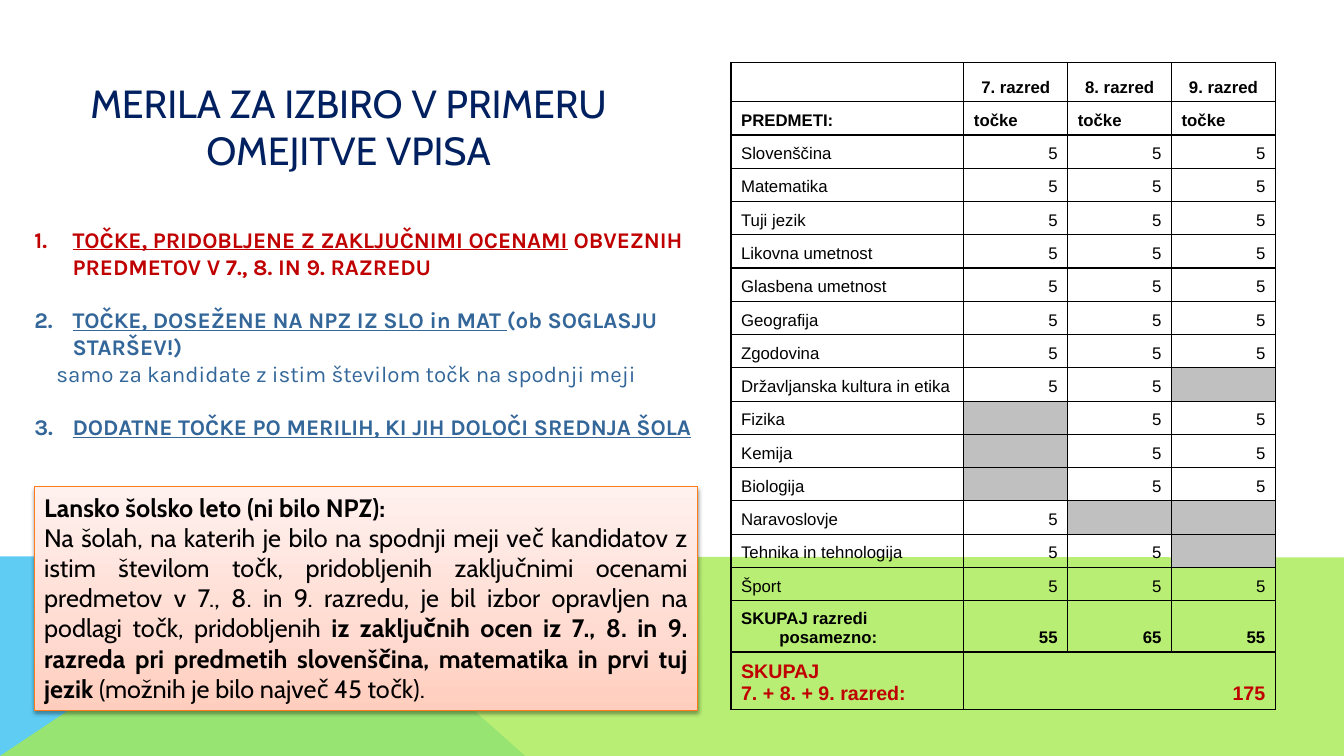
from dataclasses import dataclass
from typing import Optional

from lxml import etree
from pptx import Presentation
from pptx import util as u
from pptx.dml.color import RGBColor
from pptx.enum import shapes, text
from pptx.oxml.ns import qn

PX = 9144  # EMU per px, 100 px to the inch
HANGING = 38
BLACK, RED, NAVY, BLUE, GREY = "000000", "C00000", "002060", "336699", "C0C0C0"
LEFT, CENTER, RIGHT, JUSTIFY = (text.PP_ALIGN.LEFT, text.PP_ALIGN.CENTER,
                                text.PP_ALIGN.RIGHT, text.PP_ALIGN.JUSTIFY)


@dataclass(frozen=True)
class Style:
    font: str
    size: int
    color: str
    bold: bool = False
    underline: bool = False


@dataclass
class Criterion:
    runs: list[tuple[str, Style]]
    number: Optional[int] = None
    gap: int = 0


@dataclass
class TableRow:
    label: str
    values: list[str]
    height: int = 33
    align: text.PP_ALIGN = RIGHT
    style: Style = Style("Arial", 12, BLACK)


@dataclass
class Band:
    points: list[tuple[int, int]]
    color: str
    opacity: int = 100


def px(length: int) -> u.Emu:
    return u.Emu(length * PX)


def rgb(color: str) -> RGBColor:
    return RGBColor.from_string(color)


def add(parent, tag: str, **attributes):
    return etree.SubElement(parent, qn(tag), {k: str(v) for k, v in attributes.items()})


def format_run(run, style: Style) -> None:
    font = run.font
    font.name, font.size, font.color.rgb = style.font, u.Pt(style.size), rgb(style.color)
    font.bold, font.underline = style.bold, style.underline


def add_runs(paragraph, runs: list[tuple[str, Style]]) -> None:
    for words, style in runs:
        run = paragraph.add_run()
        run.text = words
        format_run(run, style)


def indent(paragraph, left: int, first: int) -> None:
    properties = paragraph._p.get_or_add_pPr()
    properties.set("marL", str(left * PX))
    properties.set("indent", str(first * PX))


def place(shape, left: int, top: int, width: int, height: int) -> None:
    shape.left, shape.top, shape.width, shape.height = map(px, (left, top, width, height))
    shape.text_frame.auto_size = text.MSO_AUTO_SIZE.NONE
    shape.text_frame.word_wrap = True


def add_title(slide, lines: str) -> None:
    title = slide.shapes.title
    place(title, 13, 47, 674, 157)
    title.text_frame.vertical_anchor = text.MSO_ANCHOR.MIDDLE
    title.text_frame.text = lines
    for paragraph in title.text_frame.paragraphs:
        paragraph.alignment = CENTER
        format_run(paragraph.runs[0], Style("Cabin", 28, NAVY))


def add_criteria(slide, criteria: list[Criterion]) -> None:
    body = slide.placeholders[1]
    place(body, 24, 219, 674, 226)
    frame = body.text_frame
    for index, criterion in enumerate(criteria):
        paragraph = frame.add_paragraph() if index else frame.paragraphs[0]
        paragraph.space_before = u.Pt(criterion.gap)
        properties = paragraph._p.get_or_add_pPr()
        if criterion.number:
            indent(paragraph, HANGING, -HANGING)
            add(properties, "a:buFontTx")
            add(properties, "a:buAutoNum", type="arabicPeriod", startAt=criterion.number)
        else:
            indent(paragraph, 22, 0)
            add(properties, "a:buNone")
        add_runs(paragraph, criterion.runs)


def add_band(slide, band: Band) -> None:
    builder = slide.shapes.build_freeform(*band.points[0], scale=PX)
    builder.add_line_segments(band.points[1:], close=True)
    shape = builder.convert_to_shape()
    shape.shadow.inherit = False
    shape.line.fill.background()
    shape.fill.solid()
    shape.fill.fore_color.rgb = rgb(band.color)
    color = shape._element.spPr.find(".//" + qn("a:srgbClr"))
    add(color, "a:alpha", val=band.opacity * 1000)


def fill_cell(cell, words: str, align: text.PP_ALIGN, style: Style, fill: str = "") -> None:
    properties = cell._tc.get_or_add_tcPr()
    for side in ("a:lnL", "a:lnR", "a:lnT", "a:lnB"):
        line = add(properties, side, w=u.Pt(1))
        add(add(line, "a:solidFill"), "a:srgbClr", val=BLACK)
    if fill:
        cell.fill.solid()
        cell.fill.fore_color.rgb = rgb(fill)
    else:
        cell.fill.background()
    cell.vertical_anchor = text.MSO_ANCHOR.BOTTOM
    cell.text_frame.text = words
    for paragraph in cell.text_frame.paragraphs:
        paragraph.alignment = align
        indent(paragraph, HANGING, -HANGING)
        for run in paragraph.runs:
            format_run(run, style)
        if not words:
            paragraph._p.get_or_add_endParaRPr().set("sz", str(style.size * 100))


def add_points_table(slide, rows: list[TableRow]) -> None:
    widths = [231] + [103] * 3
    height = sum(row.height for row in rows)
    table = slide.shapes.add_table(len(rows), len(widths), px(725), px(62),
                                   px(sum(widths)), px(height)).table
    table.first_row = table.horz_banding = False
    for column, width in zip(table.columns, widths):
        column.width = px(width)
    for index, row in enumerate(rows):
        table.rows[index].height = px(row.height)
        fill_cell(table.cell(index, 0), row.label, LEFT, row.style)
        for column, value in enumerate(row.values, 1):
            fill_cell(table.cell(index, column), value, row.align, row.style,
                      "" if value else GREY)
    last = len(rows) - 1
    for column in (2, 3):
        fill_cell(table.cell(last, column), "", RIGHT, rows[last].style)
    table.cell(last, 1).merge(table.cell(last, 3))


def add_note(slide, paragraphs: list[list[tuple[str, Style]]]) -> None:
    note = slide.shapes.add_shape(shapes.MSO_SHAPE.RECTANGLE, 0, 0, 0, 0)
    place(note, 34, 483, 658, 222)
    note.line.color.rgb, note.line.width = rgb("FF7C1B"), u.Pt(0.75)
    note.fill.gradient()
    note.fill.gradient_angle = 90
    stops = note._element.spPr.find(".//" + qn("a:gsLst"))
    for stop in list(stops):
        stops.remove(stop)
    for position, color in ((0, "FFCDBD"), (35, "FFDBD1"), (100, "FFF1EE")):
        add(add(stops, "a:gs", pos=position * 1000), "a:srgbClr", val=color)
    note.shadow.inherit = False
    shadow = add(note._element.spPr.find(qn("a:effectLst")), "a:outerShdw",
                 blurRad=u.Pt(3.1), dist=u.Pt(1.6), dir=90 * 60000, rotWithShape=0)
    add(add(shadow, "a:srgbClr", val=BLACK), "a:alpha", val=38000)
    frame = note.text_frame
    frame.vertical_anchor = text.MSO_ANCHOR.TOP
    for index, runs in enumerate(paragraphs):
        paragraph = frame.add_paragraph() if index else frame.paragraphs[0]
        paragraph.alignment = JUSTIFY
        add_runs(paragraph, runs)


# Content
BANDS = [Band([(0, 750), (0, 552), (298, 552), (521, 750)], "5ECCF3"),
         Band([(0, 750), (297, 552), (1333, 553), (1333, 750)], "A7EA52", 80)]

KEY, KEY_RED = Style("Karla", 16, BLUE, True, True), Style("Karla", 16, RED, True, True)
CRITERIA = [
    Criterion([("TOČKE, PRIDOBLJENE Z ZAKLJUČNIMI OCENAMI", KEY_RED),
               (" OBVEZNIH PREDMETOV V 7., 8. IN 9. RAZREDU", Style("Karla", 16, RED, True))], 1),
    Criterion([("TOČKE, DOSEŽENE NA NPZ IZ SLO in MAT ", KEY),
               ("(ob SOGLASJU STARŠEV!)", Style("Karla", 16, BLUE, True))], 2, gap=19),
    Criterion([("samo za kandidate z istim številom točk na spodnji meji", Style("Karla", 16, BLUE))]),
    Criterion([("DODATNE TOČKE PO MERILIH, KI JIH DOLOČI SREDNJA ŠOLA", KEY)], 3, gap=19)]

BOLD = Style("Arial", 12, BLACK, True)
FULL = ["5", "5", "5"]
ROWS = [
    TableRow("", ["7. razred", "8. razred", "9. razred"], 39, CENTER, BOLD),
    TableRow("PREDMETI:", ["točke"] * 3, align=LEFT, style=BOLD),
    *(TableRow(subject, FULL) for subject in (
        "Slovenščina", "Matematika", "Tuji jezik", "Likovna umetnost",
        "Glasbena umetnost", "Geografija", "Zgodovina")),
    TableRow("Državljanska kultura in etika", ["5", "5", ""]),
    *(TableRow(subject, ["", "5", "5"]) for subject in ("Fizika", "Kemija", "Biologija")),
    TableRow("Naravoslovje", ["5", "", ""]),
    TableRow("Tehnika in tehnologija", ["5", "5", ""]),
    TableRow("Šport", FULL),
    TableRow("SKUPAJ razredi posamezno:", ["55", "65", "55"], 51, style=BOLD),
    TableRow("SKUPAJ\n7. + 8. + 9. razred:", ["175"], 57, style=Style("Arial", 14, RED, True))]

PLAIN, STRONG = Style("Cabin", 18, BLACK), Style("Cabin", 18, BLACK, True)
NOTE = [
    [("Lansko šolsko leto (ni bilo NPZ):", STRONG)],
    [("Na šolah, na katerih je bilo na spodnji meji več kandidatov z istim številom točk, "
      "pridobljenih zaključnimi ocenami predmetov v 7., 8. in 9. razredu, je bil izbor "
      "opravljen na podlagi točk, pridobljenih ", PLAIN),
     ("iz zaključnih ocen iz 7., 8. in 9. razreda pri predmetih slovenščina, matematika "
      "in prvi tuj jezik ", STRONG),
     ("(možnih je bilo največ 45 točk). ", PLAIN)]]


def main() -> None:
    presentation = Presentation()
    presentation.slide_width, presentation.slide_height = px(1333), px(750)
    slide = presentation.slides.add_slide(presentation.slide_layouts[1])
    for band in BANDS:
        add_band(slide, band)
    add_title(slide, "MERILA ZA IZBIRO V PRIMERU \nOMEJITVE VPISA ")
    add_criteria(slide, CRITERIA)
    add_points_table(slide, ROWS)
    add_note(slide, NOTE)
    presentation.save("out.pptx")


if __name__ == "__main__":
    main()
